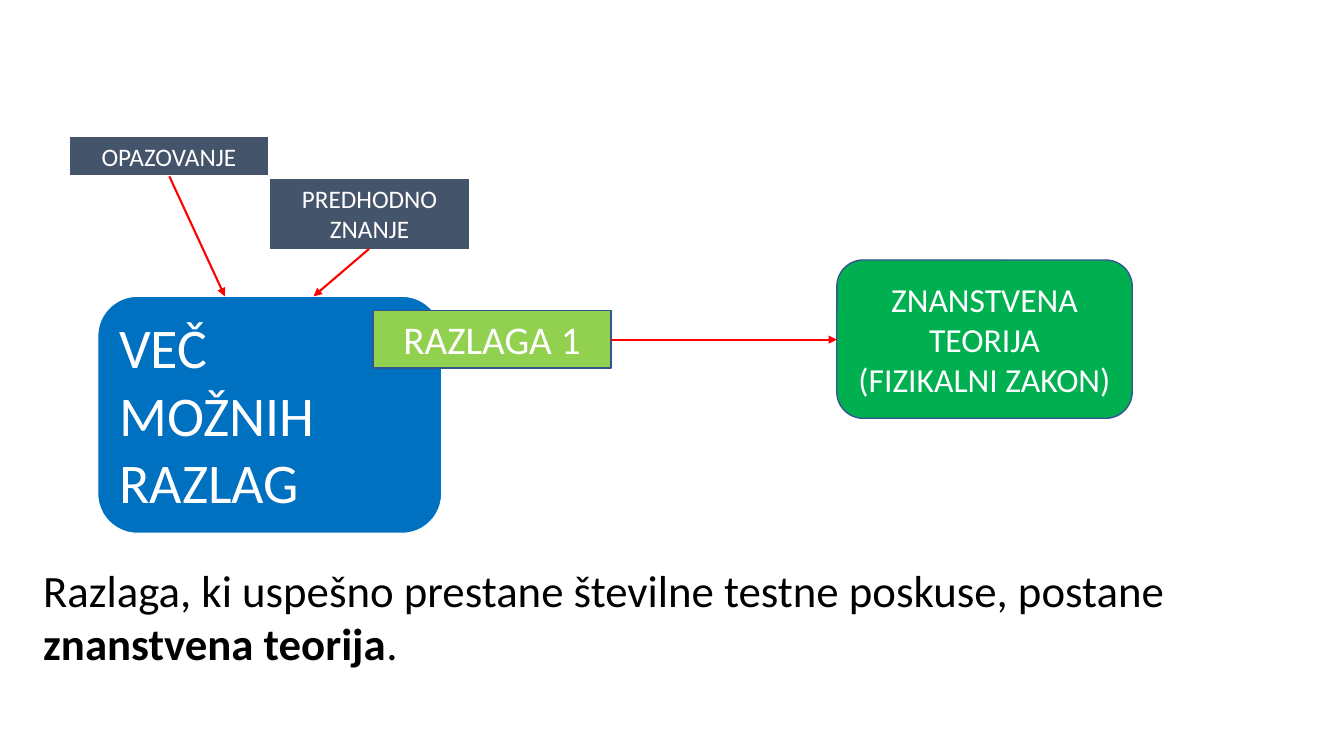
from dataclasses import dataclass

from lxml import etree
from pptx import Presentation
from pptx import util as u
from pptx.dml.color import RGBColor
from pptx.enum import shapes, text
from pptx.oxml.ns import qn
from pptx.slide import Slide

PX = 9144  # EMU per px, 100 px to the inch
FONT = "Calibri"
WHITE, BLACK, RED = "FFFFFF", "000000", "FF0000"
SLATE, BLUE, LIME, GREEN, NAVY = "44546A", "0070C0", "92D050", "00B050", "325491"
RECT = shapes.MSO_SHAPE.RECTANGLE
ROUNDED = shapes.MSO_SHAPE.ROUNDED_RECTANGLE
LEFT, CENTER = text.PP_ALIGN.LEFT, text.PP_ALIGN.CENTER
TOP, MIDDLE = text.MSO_ANCHOR.TOP, text.MSO_ANCHOR.MIDDLE


@dataclass
class Box:
    lines: list[str]
    left: int
    top: int
    width: int
    height: int
    fill: str
    outline: str
    outline_pt: float
    size: int
    kind: shapes.MSO_SHAPE = RECT
    align: text.PP_ALIGN = CENTER
    anchor: text.MSO_ANCHOR = TOP


@dataclass
class Arrow:
    start: tuple[int, int]
    end: tuple[int, int]


BOXES = [
    Box(["OPAZOVANJE"], 68, 135, 199, 40, SLATE, WHITE, 1.5, 18),
    Box(["PREDHODNO ZNANJE"], 267, 177, 199, 71, SLATE, WHITE, 1.5, 18),
    Box(["VEČ", "MOŽNIH", "RAZLAG"], 97, 294, 341, 235, BLUE, WHITE, 0.75, 40,
        ROUNDED, LEFT),
    Box(["RAZLAGA 1"], 370, 308, 236, 57, LIME, NAVY, 1, 28),
    Box(["ZNANSTVENA TEORIJA", "(FIZIKALNI ZAKON)"], 830, 258, 293, 157, GREEN, NAVY, 1, 24,
        ROUNDED, CENTER, MIDDLE),
]

ARROWS = [
    Arrow((168, 175), (223, 294)),
    Arrow((366, 247), (311, 294)),
    Arrow((606, 337), (830, 337)),
]

CONCLUSION = [
    ("Razlaga, ki uspešno prestane številne testne poskuse, postane ", False),
    ("znanstvena teorija", True),
    (".", False),
]


def px(*lengths: int) -> list[u.Emu]:
    return [u.Emu(length * PX) for length in lengths]


def color(value: str) -> RGBColor:
    return RGBColor.from_string(value)


def draw_box(page: Slide, box: Box) -> None:
    shape = page.shapes.add_shape(box.kind, *px(box.left, box.top, box.width, box.height))
    shape.shadow.inherit = False
    shape.fill.solid()
    shape.fill.fore_color.rgb = color(box.fill)
    shape.line.color.rgb = color(box.outline)
    shape.line.width = u.Pt(box.outline_pt)
    frame = shape.text_frame
    frame.word_wrap = True
    frame.vertical_anchor = box.anchor
    for index, line in enumerate(box.lines):
        para = frame.add_paragraph() if index else frame.paragraphs[0]
        para.text = line
        para.alignment = box.align
        para.font.name = FONT
        para.font.size = u.Pt(box.size)
        para.font.color.rgb = color(WHITE)


def draw_arrow(page: Slide, arrow: Arrow) -> None:
    connector = page.shapes.add_connector(
        shapes.MSO_CONNECTOR.STRAIGHT, *px(*arrow.start, *arrow.end))
    connector.line.color.rgb = color(RED)
    connector.line.width = u.Pt(1.5)
    etree.SubElement(connector.line._get_or_add_ln(), qn("a:tailEnd"), type="triangle")
    etree.SubElement(connector._element.spPr, qn("a:effectLst"))


def draw_conclusion(page: Slide) -> None:
    frame = page.shapes.add_textbox(*px(33, 553, 1269, 118)).text_frame
    frame.word_wrap = True
    para = frame.paragraphs[0]
    para.font.name = FONT
    para.font.size = u.Pt(32)
    para.font.color.rgb = color(BLACK)
    for words, bold in CONCLUSION:
        span = para.add_run()
        span.text = words
        span.font.bold = bold


def main() -> None:
    deck = Presentation()
    deck.slide_width, deck.slide_height = px(1333, 750)
    page = deck.slides.add_slide(deck.slide_layouts[6])

    # Observations, explanations and the resulting theory
    for box in BOXES:
        draw_box(page, box)

    # Steps between them
    for arrow in ARROWS:
        draw_arrow(page, arrow)

    # Closing sentence
    draw_conclusion(page)

    deck.save("out.pptx")


if __name__ == "__main__":
    main()
